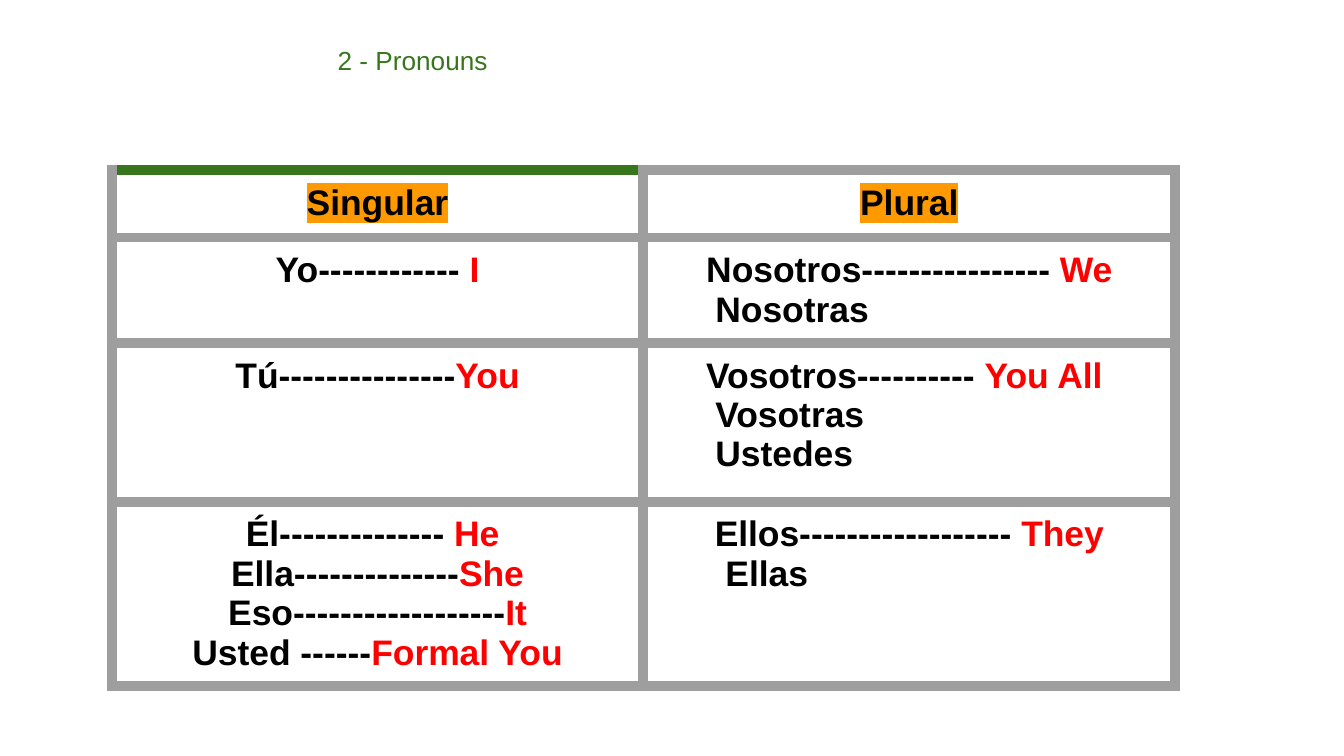
from dataclasses import dataclass

from lxml import etree
from pptx import Presentation
from pptx import util as u
from pptx.dml.color import RGBColor
from pptx.enum import text
from pptx.oxml import ns

GREEN, GREY, BLACK, RED, ORANGE = "38761D", "9E9E9E", "000000", "FF0000", "FF9900"
FONT = "Arial"
INSET = u.Cm(0.25)
BORDER_WIDTH = u.Pt(6)
COLUMN_WIDTH = 10.05
ROW_HEIGHTS = [1.27, 1.98, 3.0, 3.49]


@dataclass
class Line:
    spanish: str
    english: str = ""
    indent: float = 0  # centimetres; indented lines are left aligned
    highlight: str = ""


ROWS = [
    [[Line("Singular", highlight=ORANGE)], [Line("Plural", highlight=ORANGE)]],
    [[Line("Yo------------ ", "I")],
     [Line("Nosotros---------------- ", "We"), Line("Nosotras", indent=1.11)]],
    [[Line("Tú---------------", "You")],
     [Line("Vosotros---------- ", "You All "), Line("Vosotras", indent=1.11),
      Line("Ustedes", indent=1.11)]],
    [[Line("Él-------------- ", "He "), Line("Ella--------------", "She"),
      Line("Eso------------------", "It"), Line("Usted ------", "Formal You")],
     [Line("Ellos------------------ ", "They"), Line("Ellas", indent=1.3)]],
]


def rgb(color: str) -> RGBColor:
    return RGBColor.from_string(color)


def add_color(parent, tag: str, color: str):
    element = etree.SubElement(parent, ns.qn(tag))
    etree.SubElement(element, ns.qn("a:srgbClr"), val=color)
    return element


def add_span(para, words: str, size: float, color: str, bold=False, highlight="") -> None:
    span = para.add_run()
    span.text = words
    span.font.size = u.Pt(size)
    span.font.bold = bold
    span.font.color.rgb = rgb(color)
    if highlight:
        add_color(span.font._element, "a:highlight", highlight)
    span.font.name = FONT


def set_borders(cell, top_color: str) -> None:
    properties = cell._tc.get_or_add_tcPr()
    for side in "LRTB":
        edge = etree.SubElement(properties, ns.qn(f"a:ln{side}"), w=str(BORDER_WIDTH))
        add_color(edge, "a:solidFill", top_color if side == "T" else GREY)


def fill_cell(cell, lines: list[Line], top_color: str) -> None:
    set_borders(cell, top_color)
    cell.fill.background()
    cell.margin_left = cell.margin_right = INSET
    cell.margin_top = cell.margin_bottom = INSET
    frame = cell.text_frame
    for index, line in enumerate(lines):
        para = frame.paragraphs[0] if index == 0 else frame.add_paragraph()
        if line.indent:
            para.alignment = text.PP_ALIGN.LEFT
            para._p.get_or_add_pPr().set("marL", str(u.Cm(line.indent)))
        else:
            para.alignment = text.PP_ALIGN.CENTER
        add_span(para, line.spanish, 19, BLACK, True, line.highlight)
        if line.english:
            add_span(para, line.english, 19, RED, True)


def add_title(page, words: str) -> None:
    box = page.shapes.title
    box.left, box.top, box.width, box.height = (
        u.Cm(1.27), u.Cm(0.71), u.Cm(13.06), u.Cm(1.68))
    box.text_frame.vertical_anchor = text.MSO_ANCHOR.TOP
    para = box.text_frame.paragraphs[0]
    para.alignment = text.PP_ALIGN.CENTER
    add_span(para, words, 14, GREEN)


def add_pronoun_table(page) -> None:
    table = page.shapes.add_table(
        len(ROWS), 2, u.Cm(2.11), u.Cm(3.22),
        u.Cm(2 * COLUMN_WIDTH), u.Cm(sum(ROW_HEIGHTS))).table
    table.first_row = table.horz_banding = False
    for column in table.columns:
        column.width = u.Cm(COLUMN_WIDTH)
    for r, (height, cells) in enumerate(zip(ROW_HEIGHTS, ROWS)):
        table.rows[r].height = u.Cm(height)
        for c, lines in enumerate(cells):
            # Only the first heading has a green top edge
            fill_cell(table.cell(r, c), lines, GREEN if r == c == 0 else GREY)


def main() -> None:
    deck = Presentation()
    deck.slide_width, deck.slide_height = u.Cm(25.4), u.Cm(14.29)
    page = deck.slides.add_slide(deck.slide_layouts[5])
    add_title(page, "2 - Pronouns")
    add_pronoun_table(page)
    deck.save("out.pptx")


if __name__ == "__main__":
    main()
